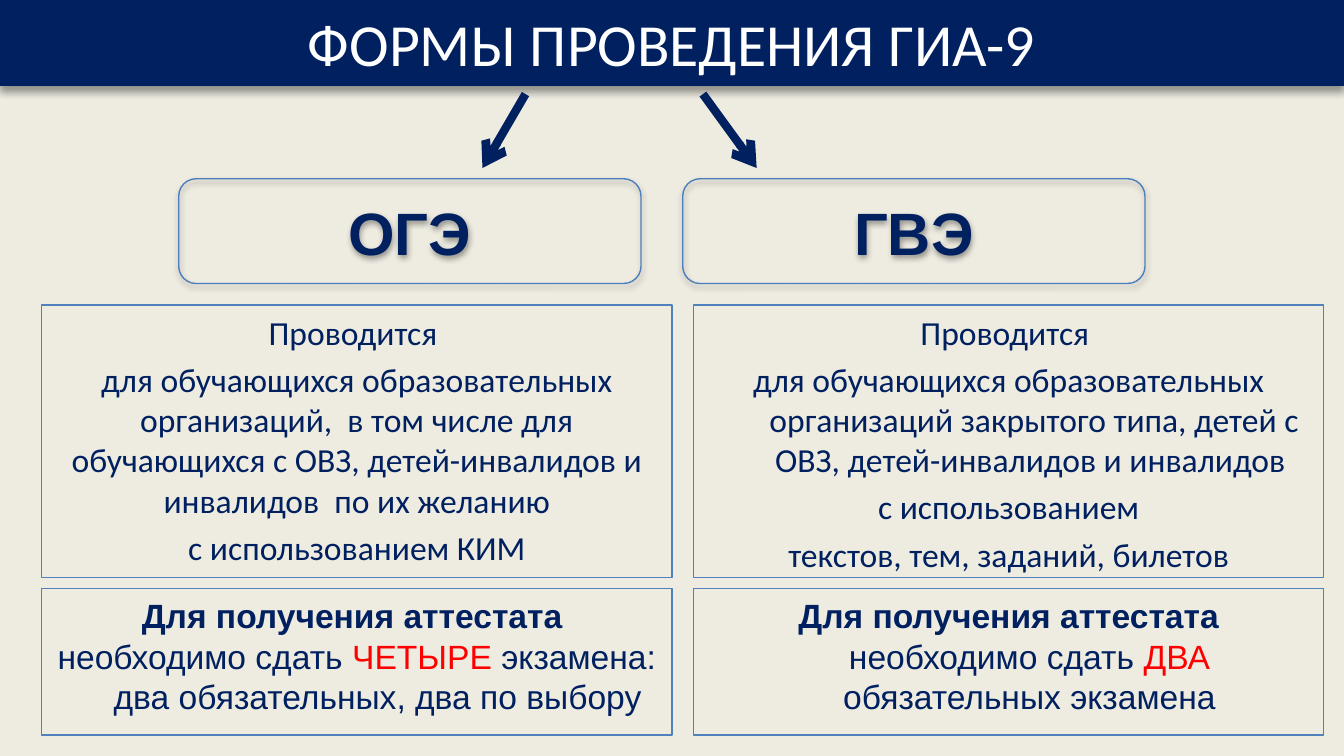
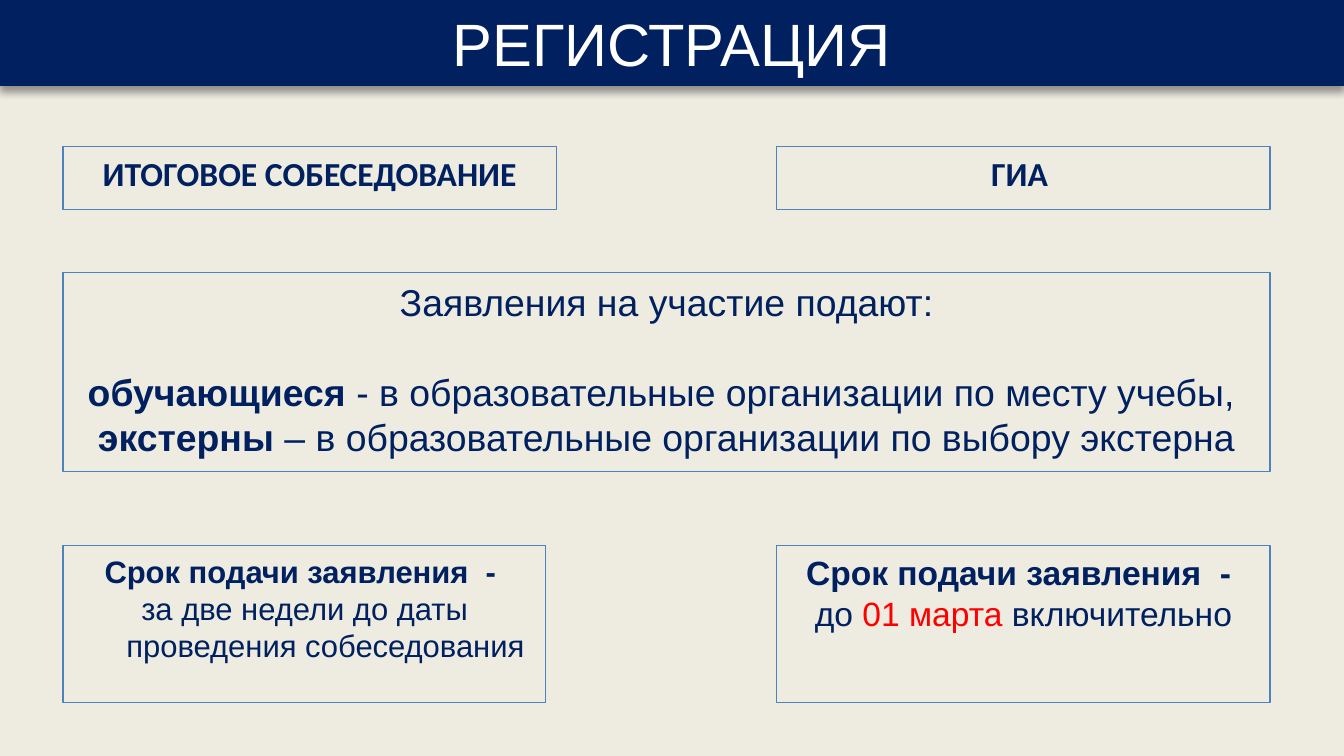
from lxml import etree
from pptx import Presentation
from pptx.dml.color import RGBColor
from pptx.enum.shapes import MSO_CONNECTOR, MSO_SHAPE
from pptx.enum.text import MSO_ANCHOR, MSO_AUTO_SIZE, PP_ALIGN
from pptx.oxml.ns import qn
from pptx.util import Inches, Pt

RECT = MSO_SHAPE.RECTANGLE
ROUNDED = MSO_SHAPE.ROUNDED_RECTANGLE
STRAIGHT = MSO_CONNECTOR.STRAIGHT
TOP, MIDDLE = MSO_ANCHOR.TOP, MSO_ANCHOR.MIDDLE
CENTER = PP_ALIGN.CENTER
GROW = MSO_AUTO_SIZE.SHAPE_TO_FIT_TEXT

NAVY, CREAM, WHITE, RED = "002060", "EEECE1", "FFFFFF", "FF0000"
BORDER, LABEL_BORDER = "4F81BD", "4B7EBC"
SLIDE_W, BAND_H = 10, 0.64
SLIDE_H = SLIDE_W * 9 / 16
HANGING = 0.31


def rgb(value):
    return RGBColor.from_string(value)


def add_shadow(shape, alpha, blur, distance):
    effects = shape._element.spPr.find(qn("a:effectLst"))
    outer = etree.SubElement(effects, qn("a:outerShdw"), blurRad=str(Pt(blur)),
                             dist=str(Pt(distance)), dir="5400000", rotWithShape="0")
    black = etree.SubElement(outer, qn("a:srgbClr"), val="000000")
    etree.SubElement(black, qn("a:alpha"), val=str(alpha * 1000))


def add_box(slide, box, kind=RECT, fill=None, border=BORDER):
    shape = slide.shapes.add_shape(kind, *map(Inches, box))
    shape.shadow.inherit = False
    if fill:
        shape.fill.solid()
        shape.fill.fore_color.rgb = rgb(fill)
    else:
        shape.fill.background()
    if border:
        shape.line.color.rgb = rgb(border)
        shape.line.width = Pt(0.75)
    else:
        shape.line.fill.background()
    return shape


def write(shape, paragraphs, size=18, font="Arial", color=NAVY,
          hanging=0, before=0, anchor=TOP):
    """Each paragraph is a list of runs: (text, bold, own colour)."""
    frame = shape.text_frame
    frame.word_wrap = True
    frame.vertical_anchor = anchor
    for index, runs in enumerate(paragraphs):
        paragraph = frame.paragraphs[0] if index == 0 else frame.add_paragraph()
        paragraph.alignment = CENTER
        paragraph.space_before = Pt(before)
        if hanging:
            props = paragraph._p.get_or_add_pPr()
            props.set("marL", str(Inches(hanging)))
            props.set("indent", str(-Inches(hanging)))
        for text, bold, own_color in runs:
            run = paragraph.add_run()
            run.text = text
            run.font.size = Pt(size)
            run.font.name = font
            run.font.bold = bold
            run.font.color.rgb = rgb(own_color or color)


def plain(text):
    return (text, False, None)


def strong(text):
    return (text, True, None)


def accent(text):
    return (text, False, RED)


def titled_slide(prs, title, font):
    slide = prs.slides.add_slide(prs.slide_layouts[6])
    slide.background.fill.solid()
    slide.background.fill.fore_color.rgb = rgb(CREAM)
    band = add_box(slide, (0, 0, SLIDE_W, BAND_H), fill=NAVY, border=None)
    add_shadow(band, 40, 4, 3)
    write(band, [[plain(title)]], 32, font, WHITE)
    band.text_frame.auto_size = GROW
    return slide


def add_arrow(slide, start, end):
    arrow = slide.shapes.add_connector(STRAIGHT, *map(Inches, start + end))
    arrow.line.color.rgb = rgb(NAVY)
    arrow.line.width = Pt(4.5)
    etree.SubElement(arrow.line._get_or_add_ln(), qn("a:tailEnd"), type="arrow")
    etree.SubElement(arrow._element.spPr, qn("a:effectLst"))


def exam_column(slide, box, form):
    left, top, width, height = box
    # Arrow from the title band to the exam name
    arrow_from, arrow_to = form["arrow"]
    add_arrow(slide, (left + arrow_from, top), (left + arrow_to, top + 0.55))
    # Exam name
    name = add_box(slide, (left + form["name_shift"], top + 0.63, 3.44, 0.78),
                   ROUNDED, border=LABEL_BORDER)
    add_shadow(name, 38, 3.1, 1.6)
    write(name, [[strong(form["name"])]], 32, hanging=HANGING, anchor=MIDDLE)
    # Who takes it
    audience = add_box(slide, (left, top + 1.57, width, 2.03))
    write(audience, [[plain(line)] for line in form["audience"]], font="Calibri",
          hanging=form["audience_hanging"], before=3.6)
    # What is needed for the certificate
    certificate = add_box(slide, (left, top + 3.68, width, height - 3.68))
    write(certificate, form["certificate"], hanging=HANGING)


def forms_slide(prs):
    slide = titled_slide(prs, "ФОРМЫ ПРОВЕДЕНИЯ ГИА-9", "Calibri")
    certificate_lead = strong("Для получения аттестата ")
    forms = [
        {"name": "ОГЭ", "name_shift": 1.02, "arrow": (3.6, 3.28),
         "audience_hanging": 0,
         "audience": [
             "Проводится ",
             "для обучающихся образовательных организаций,  в том числе для "
             "обучающихся с ОВЗ, детей-инвалидов и инвалидов  по их желанию",
             "с использованием КИМ"],
         "certificate": [
             [certificate_lead],
             [plain("необходимо сдать "), accent("ЧЕТЫРЕ"),
              plain(" экзамена: два обязательных, два по выбору")]]},
        {"name": "ГВЭ", "name_shift": -0.08, "arrow": (0.07, 0.47),
         "audience_hanging": 0.38,
         "audience": [
             "Проводится ",
             "для обучающихся образовательных организаций закрытого типа, "
             "детей с ОВЗ, детей-инвалидов и инвалидов ",
             " с использованием ",
             "текстов, тем, заданий, билетов"],
         "certificate": [
             [certificate_lead, plain("необходимо сдать "), accent("ДВА "),
              plain("обязательных экзамена")]]},
    ]
    for column, form in enumerate(forms):
        exam_column(slide, (0.31 + 4.85 * column, 0.7, 4.69, 4.77), form)


def procedure_column(slide, box, heading, deadline_width, size, deadline):
    left, top, width, height = box
    # Procedure name
    write(add_box(slide, (left, top, width, 0.47)), [[strong(heading)]],
          font="Calibri", before=3.6)
    # Deadline
    term = add_box(slide, (left, top + 2.97, deadline_width, height - 2.97))
    write(term, [[strong("Срок подачи заявления  - ")], deadline],
          size, hanging=HANGING)


def applications(slide, box):
    panel = add_box(slide, box)
    write(panel, [
        [plain("Заявления на участие подают:")],
        [strong("обучающиеся"),
         plain(" - в образовательные организации по месту учебы, ")],
        [strong("экстерны"),
         plain(" – в образовательные организации по выбору экстерна")],
    ], 20, hanging=HANGING)
    # One line of space under the lead sentence
    panel.text_frame.paragraphs[1].space_before = Pt(24)


def registration_slide(prs):
    slide = titled_slide(prs, "РЕГИСТРАЦИЯ", "Arial")
    procedure_column(slide, (0.47, 1.09, 3.67, 4.14), "ИТОГОВОЕ СОБЕСЕДОВАНИЕ",
                     3.59, 16.6,
                     [plain("за две недели до даты проведения собеседования")])
    procedure_column(slide, (5.78, 1.09, 3.67, 4.14), "ГИА ", 3.67, 18,
                     [plain("до "), accent("01 марта "), plain("включительно")])
    applications(slide, (0.47, 2.03, 8.98, 1.48))


def main():
    prs = Presentation()
    prs.slide_width, prs.slide_height = Inches(SLIDE_W), Inches(SLIDE_H)
    forms_slide(prs)
    registration_slide(prs)
    prs.save("out.pptx")


if __name__ == "__main__":
    main()
